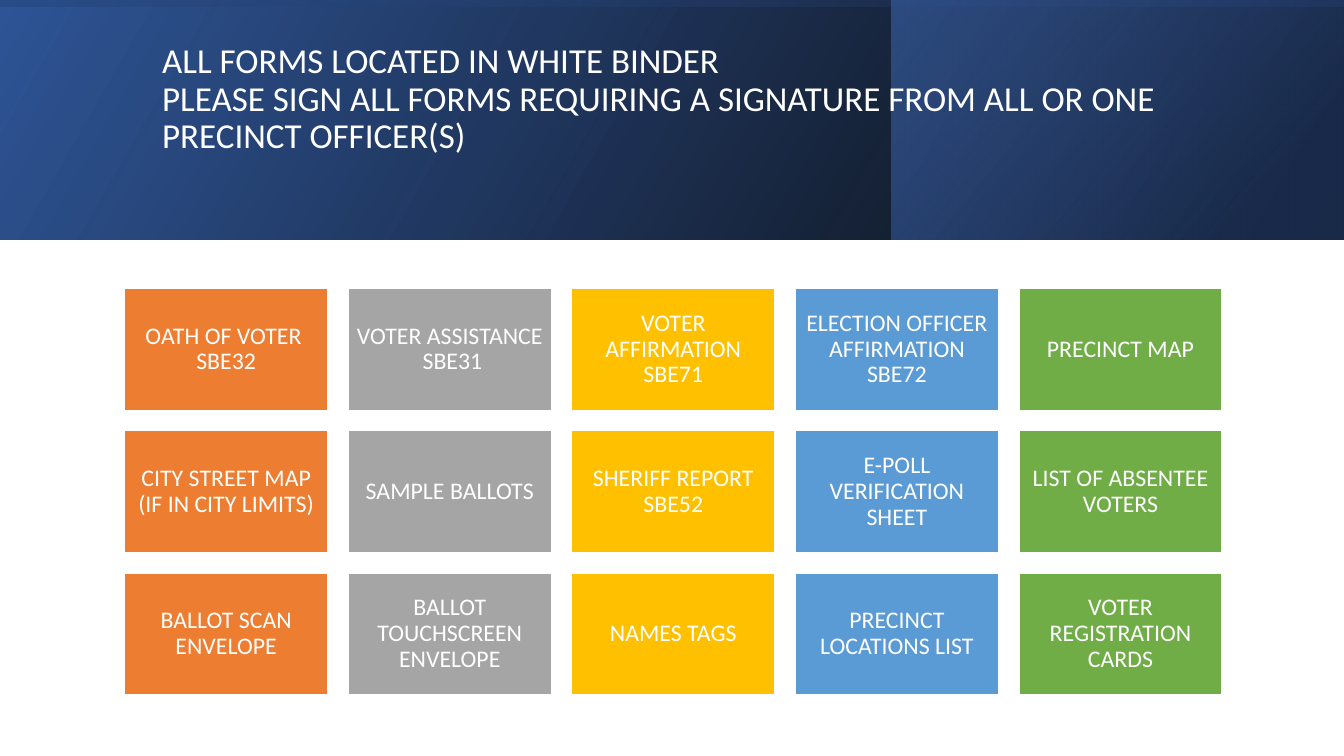
import pptx
import pptx.util
import pptx.dml.color
import pptx.enum.shapes
import pptx.enum.text
import pptx.oxml.ns
from lxml import etree

Pt = pptx.util.Pt
RGB = pptx.dml.color.RGBColor.from_string
RECTANGLE = pptx.enum.shapes.MSO_SHAPE.RECTANGLE
COLORS = {
    "white": "FFFFFF", "black": "000000", "blue": "2F5597",
    "navy": "203864", "bright": "4472C4",
    "orange": "ED7D31", "gray": "A5A5A5", "gold": "FFC000",
    "sky": "5B9BD5", "green": "70AD47",
}

presentation = pptx.Presentation()
presentation.slide_width, presentation.slide_height = Pt(960), Pt(540)
slide = presentation.slides.add_slide(presentation.slide_layouts[6])

# Header band: left, top, width, height, rotation, clockwise gradient angle,
# then stops of (position, color, opacity in percent)
band_height = 170.8
overlay_left = (960 - band_height) / 2
bands = [
    (0, 0, 960, band_height, 0, 330, [(0, "black", 96), (100, "blue", 100)]),
    (636.8, 0, 323, band_height, 0, 320, [(19, "navy", 68), (100, "bright", 48)]),
    (overlay_left, -overlay_left, band_height, 960, 270, 350,
     [(23, "blue", 16), (99, "black", 45)]),
]
for left, top, width, height, rotation, angle, stops in bands:
    band = slide.shapes.add_shape(RECTANGLE, Pt(left), Pt(top), Pt(width), Pt(height))
    band.shadow.inherit = False
    band.line.fill.background()
    band.rotation = rotation
    band._element.spPr.xfrm.set("flipH", "1")
    band.fill.gradient()
    band.fill.gradient_angle = 360 - angle
    for gradient_stop, (position, color, opacity) in zip(band.fill.gradient_stops, stops):
        gradient_stop.position = position / 100
        gradient_stop.color.rgb = RGB(COLORS[color])
    color_elements = band._element.spPr.iter(pptx.oxml.ns.qn("a:srgbClr"))
    for color_element, (position, color, opacity) in zip(color_elements, stops):
        alpha = etree.SubElement(color_element, pptx.oxml.ns.qn("a:alpha"))
        alpha.set("val", str(opacity * 1000))

# Title
title = slide.shapes.add_textbox(Pt(108.8), Pt(27.2), Pt(765.4), Pt(124))
title.text_frame.word_wrap = True
title.text_frame.vertical_anchor = pptx.enum.text.MSO_ANCHOR.TOP
paragraph = title.text_frame.paragraphs[0]
paragraph.text = (
    "ALL FORMS LOCATED IN WHITE BINDER\v"
    "PLEASE SIGN ALL FORMS REQUIRING A SIGNATURE FROM ALL OR ONE PRECINCT OFFICER(S)"
)
paragraph.line_spacing = 0.9
paragraph.font.name = "Calibri"
paragraph.font.size = Pt(25)
paragraph.font.color.rgb = RGB(COLORS["white"])

# Grid of form cards, one color per column
card_colors = ["orange", "gray", "gold", "sky", "green"]
form_rows = [
    ["OATH OF VOTER  SBE32", "VOTER ASSISTANCE  SBE31", "VOTER AFFIRMATION SBE71",
     "ELECTION OFFICER AFFIRMATION SBE72", "PRECINCT MAP"],
    ["CITY STREET MAP (IF IN CITY LIMITS)", "SAMPLE BALLOTS", "SHERIFF REPORT SBE52",
     "E-POLL VERIFICATION SHEET", "LIST OF ABSENTEE VOTERS"],
    ["BALLOT SCAN ENVELOPE", "BALLOT TOUCHSCREEN ENVELOPE", "NAMES TAGS",
     "PRECINCT LOCATIONS LIST", "VOTER REGISTRATION CARDS"],
]
grid_left, grid_top = 89, 206
card_width, card_height, gap = 145.2, 87.1, 14.5

for row, forms in enumerate(form_rows):
    for column, (form, color) in enumerate(zip(forms, card_colors)):
        card = slide.shapes.add_shape(
            RECTANGLE,
            Pt(grid_left + column * (card_width + gap)),
            Pt(grid_top + row * (card_height + gap)),
            Pt(card_width), Pt(card_height))
        card.shadow.inherit = False
        card.fill.solid()
        card.fill.fore_color.rgb = RGB(COLORS[color])
        card.line.color.rgb = RGB(COLORS["white"])
        card.line.width = Pt(1)
        frame = card.text_frame
        frame.word_wrap = True
        frame.vertical_anchor = pptx.enum.text.MSO_ANCHOR.MIDDLE
        frame.margin_left = frame.margin_right = Pt(5)
        frame.margin_top = frame.margin_bottom = Pt(5)
        paragraph = frame.paragraphs[0]
        paragraph.text = form
        paragraph.alignment = pptx.enum.text.PP_ALIGN.CENTER
        paragraph.line_spacing = 0.9
        paragraph.font.name = "Calibri"
        paragraph.font.size = Pt(17)
        paragraph.font.color.rgb = RGB(COLORS["white"])

presentation.save("out.pptx")
